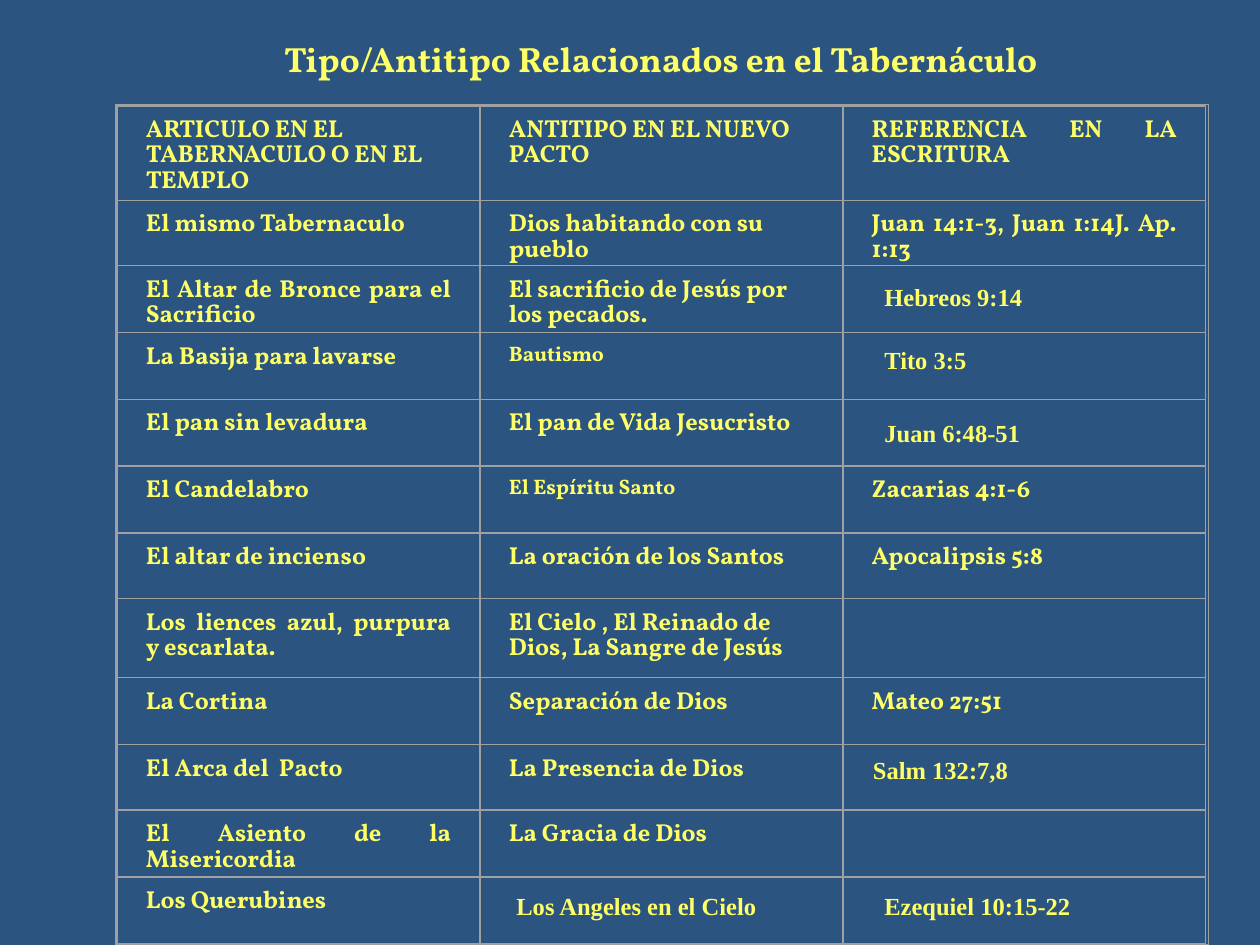
import itertools

import pptx
import pptx.dml.color
import pptx.enum.shapes
import pptx.enum.text
import pptx.util

Inches = pptx.util.Inches
Align = pptx.enum.text.PP_ALIGN
COLORS = {"back": "2B5481", "text": "FFFF66", "line": "A0A0A0"}
GRID_LEFT, GRID_TOP = 0.93, 0.84
COLUMN_WIDTH = 2.88
CELL_PADDING = 0.13
ROW_HEIGHTS = [0.75, 0.52, 0.53, 0.53, 0.53, 0.53, 0.52, 0.63, 0.53, 0.52, 0.53, 0.53]
ROWS = [
    ("ARTICULO EN EL TABERNACULO O EN EL TEMPLO", "ANTITIPO EN EL NUEVO PACTO",
     "REFERENCIA EN LA ESCRITURA"),
    ("El mismo Tabernaculo", "Dios habitando con su pueblo",
     "Juan 14:1-3, Juan 1:14J. Ap. 1:13"),
    ("El Altar de Bronce para el Sacrificio", "El sacrificio de Jesús por los pecados.", ""),
    ("La Basija para lavarse", "Bautismo", ""),
    ("El pan sin levadura", "El pan de Vida Jesucristo", ""),
    ("El Candelabro", "El Espíritu Santo", "Zacarias 4:1-6"),
    ("El altar de incienso", "La oración de los Santos", "Apocalipsis 5:8"),
    ("Los liences azul, purpura y escarlata.",
     "El Cielo , El Reinado de Dios, La Sangre de Jesús", ""),
    ("La Cortina", "Separación de Dios", "Mateo 27:51"),
    ("El Arca del  Pacto", "La Presencia de Dios", ""),
    ("El Asiento de la Misericordia", "La Gracia de Dios", ""),
    ("Los Querubines", "", ""),
]
COLUMN_ALIGN = [Align.JUSTIFY, Align.LEFT, Align.JUSTIFY]
CELL_FORMATS = {
    (0, 0): {"align": Align.LEFT},
    (3, 1): {"size": 12},
    (5, 1): {"size": 12},
}
NOTES = [
    ("Hebreos 9:14", 6.92, 2.17, 2.25),
    ("Tito 3:5", 6.92, 2.67, 2.42),
    ("Juan 6:48-51", 6.92, 3.25, 2.42),
    ("Salm 132:7,8", 6.83, 5.92, 2.17),
    ("Los Angeles en el Cielo", 4, 7, 2.25),
    ("Ezequiel 10:15-22", 6.92, 7, 2.08),
]


def color(name):
    return pptx.dml.color.RGBColor.from_string(COLORS[name])


def write(frame, text, size=14, font="Vollkorn", align=Align.LEFT, spacing=1.0):
    frame.word_wrap = True
    para = frame.paragraphs[0]
    para.alignment = align
    para.line_spacing = spacing
    span = para.add_run()
    span.text = text
    span.font.name = font
    span.font.size = pptx.util.Pt(size)
    span.font.bold = True
    span.font.color.rgb = color("text")


class Painter:
    """Draws styled elements on the current slide."""

    def __init__(self, page):
        self.page = page
        page.background.fill.solid()
        page.background.fill.fore_color.rgb = color("back")

    def label(self, text, left, top, width, height, inset_left=0.1, inset_top=0.05, **style):
        box = self.page.shapes.add_textbox(
            Inches(left), Inches(top), Inches(width), Inches(height))
        box.text_frame.margin_left = Inches(inset_left)
        box.text_frame.margin_top = Inches(inset_top)
        write(box.text_frame, text, **style)

    def frame(self, left, top, width, height, line_width=0):
        box = self.page.shapes.add_shape(
            pptx.enum.shapes.MSO_SHAPE.RECTANGLE,
            Inches(left), Inches(top), Inches(width), Inches(height))
        box.shadow.inherit = False
        box.fill.background()
        box.line.color.rgb = color("line")
        box.line.width = pptx.util.Pt(line_width)

    def grid(self):
        tops = itertools.accumulate(ROW_HEIGHTS, initial=GRID_TOP)
        for row, (top, height, texts) in enumerate(zip(tops, ROW_HEIGHTS, ROWS)):
            for column, text in enumerate(texts):
                left = GRID_LEFT + column * COLUMN_WIDTH
                if text:
                    style = {"align": COLUMN_ALIGN[column], **CELL_FORMATS.get((row, column), {})}
                    self.label(text, left + CELL_PADDING, top, COLUMN_WIDTH - 2 * CELL_PADDING,
                               height, inset_top=0.09, spacing=0.86, **style)
                self.frame(left, top, COLUMN_WIDTH, height)


def main():
    deck = pptx.Presentation()
    deck.slide_width, deck.slide_height = Inches(10), Inches(7.5)
    painter = Painter(deck.slides.add_slide(deck.slide_layouts[6]))
    painter.label("Tipo/Antitipo Relacionados en el Tabernáculo", 0.67, 0.25, 8.58, 0.62,
                  inset_left=0.67, size=20, align=Align.CENTER)
    painter.grid()
    painter.frame(0.92, 0.83, 8.67, 6.67, line_width=0.75)
    for text, left, top, width in NOTES:
        painter.label(text, left, top, width, 0.33, inset_top=0.07, font="Times New Roman")
    deck.save("out.pptx")


if __name__ == "__main__":
    main()
